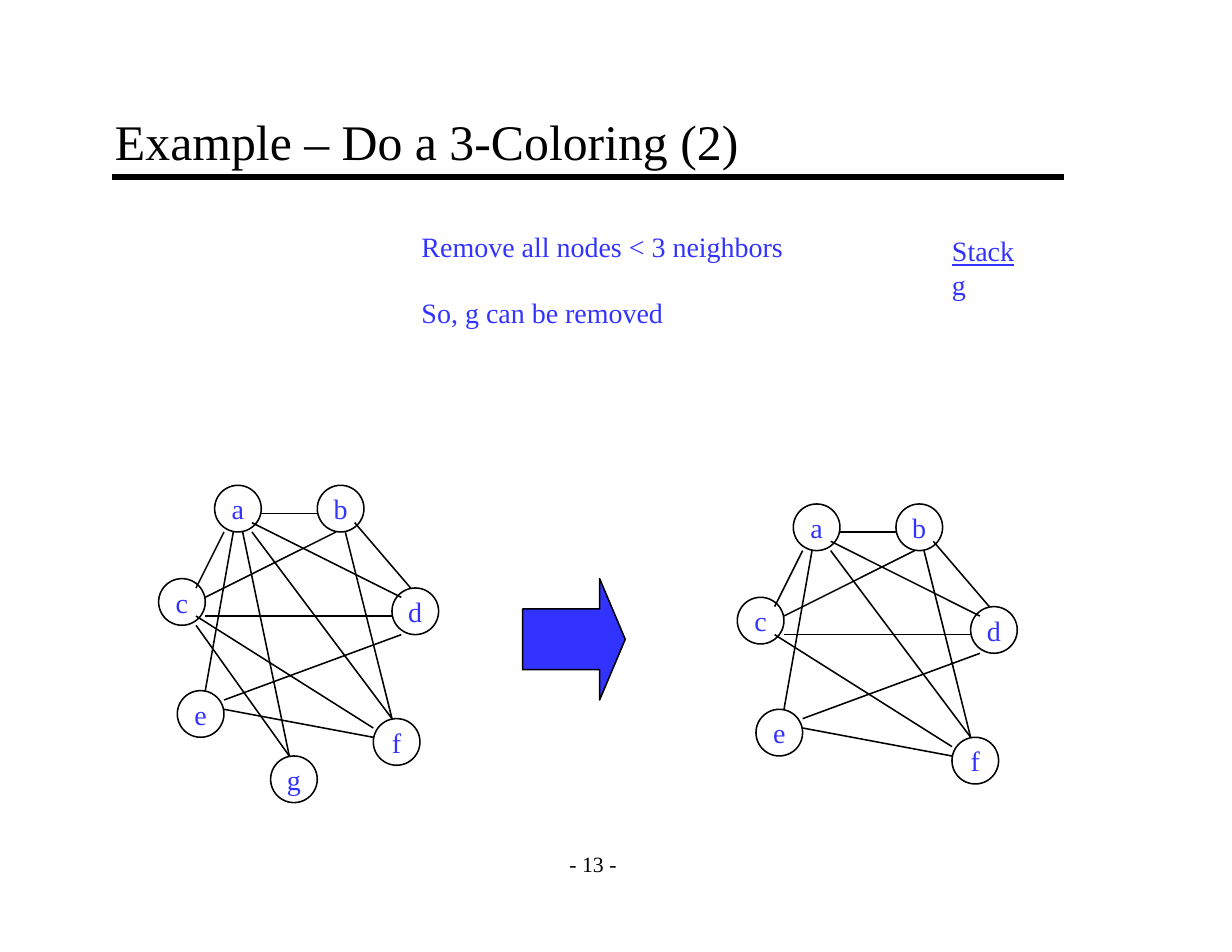
from lxml import etree
from pptx import Presentation
from pptx import util as u
from pptx.dml.color import RGBColor
from pptx.enum import shapes, text
from pptx.oxml.ns import qn

FONT = "Times New Roman"
BLUE, BLACK = "3333FF", "000000"
SIZE = 5  # node diameter in grid steps

# Top left corner of each node, in grid steps
NODES = {"a": (23, 52), "g": (29, 81), "c": (17, 62), "f": (40, 77),
         "d": (42, 63), "b": (34, 52), "e": (19, 74)}

# Joined nodes and the two line ends, in grid steps
EDGES = [("ca", 21, 63, 24, 57), ("cb", 22, 64, 36, 57),
         ("cd", 22, 66, 42, 66), ("cf", 21, 66, 40, 78),
         ("cg", 21, 67, 31, 81), ("ab", 28, 55, 34, 55),
         ("ad", 27, 56, 43, 64), ("af", 27, 57, 42, 77),
         ("ag", 26, 57, 31, 81), ("ae", 25, 57, 22, 74),
         ("bd", 38, 56, 44, 63), ("bf", 37, 57, 42, 77),
         ("de", 43, 68, 24, 75), ("ef", 24, 76, 40, 79)]


def grid(n):
    """Length of n grid steps, twelve to the inch."""
    return u.Cm(n * 2.54 / 12)


def color(code):
    return RGBColor.from_string(code)


def add_run(para, words, size=18, code=BLUE, under=None):
    run = para.add_run()
    run.text = words
    font = run.font
    font.name, font.size, font.underline = FONT, u.Pt(size), under
    font.color.rgb = color(code)


def add_line(slide, x1, y1, x2, y2, width=1):
    line = slide.shapes.add_connector(
        shapes.MSO_CONNECTOR.STRAIGHT, grid(x1), grid(y1), grid(x2), grid(y2))
    line.line.color.rgb = color(BLACK)
    line.line.width = u.Pt(width)
    props = line._element.find(qn("p:spPr"))
    etree.SubElement(props, qn("a:effectLst"))


def add_form(slide, kind, x, y, w, h, fill=None):
    form = slide.shapes.add_shape(kind, grid(x), grid(y), grid(w), grid(h))
    form.shadow.inherit = False
    if fill:
        form.fill.solid()
        form.fill.fore_color.rgb = color(fill)
    else:
        form.fill.background()
    form.line.color.rgb = color(BLACK)
    form.line.width = u.Pt(1)
    return form


def add_node(slide, name, x, y):
    frame = add_form(slide, shapes.MSO_SHAPE.OVAL, x, y, SIZE, SIZE).text_frame
    frame.word_wrap = False
    frame.vertical_anchor = text.MSO_ANCHOR.MIDDLE
    para = frame.paragraphs[0]
    para.alignment = text.PP_ALIGN.CENTER
    add_run(para, name)


def add_graph(slide, dx=0, dy=0, gone=""):
    """Draw the graph moved by dx, dy steps, without the nodes in gone."""
    for name, (x, y) in NODES.items():
        if name not in gone:
            add_node(slide, name, x + dx, y + dy)
    for pair, x1, y1, x2, y2 in EDGES:
        if not set(pair) & set(gone):
            add_line(slide, x1 + dx, y1 + dy, x2 + dx, y2 + dy)


def add_note(slide, x, y, w, h):
    frame = slide.shapes.add_textbox(
        u.Cm(x), u.Cm(y), u.Cm(w), u.Cm(h)).text_frame
    frame.word_wrap = False
    return frame


def set_title(slide, words):
    title = slide.shapes.title
    title.left, title.top = grid(11), grid(11)
    title.width, title.height = grid(102), grid(8)
    frame = title.text_frame
    frame.auto_size = text.MSO_AUTO_SIZE.NONE
    frame.vertical_anchor = text.MSO_ANCHOR.BOTTOM
    frame.margin_left = frame.margin_right = u.Cm(0.28)
    frame.margin_top = frame.margin_bottom = u.Cm(0.15)
    para = frame.paragraphs[0]
    para.alignment = text.PP_ALIGN.LEFT
    add_run(para, words, 32, BLACK)


def add_number(slide):
    frame = add_note(slide, 12.5, 19.05, 1.9, 1.07)
    frame.vertical_anchor = text.MSO_ANCHOR.MIDDLE
    para = frame.paragraphs[0]
    para.alignment = text.PP_ALIGN.CENTER
    add_run(para, "- 13 -", 14, BLACK)


def main():
    deck = Presentation()
    deck.slide_width, deck.slide_height = u.Cm(27.94), u.Cm(21.59)
    slide = deck.slides.add_slide(deck.slide_layouts[5])

    add_line(slide, 12, 19, 114, 19, 4)
    add_number(slide)
    set_title(slide, "Example – Do a 3-Coloring (2)")

    add_graph(slide)
    rule = add_note(slide, 9.31, 5.08, 8.71, 2.54)
    add_run(rule.paragraphs[0], "Remove all nodes < 3 neighbors")
    result = rule.add_paragraph()
    result.space_before = u.Pt(21)
    add_run(result, "So, g can be removed")

    add_graph(slide, 62, 2, gone="g")
    arrow = add_form(slide, shapes.MSO_SHAPE.RIGHT_ARROW, 56, 62, 11, 13, BLUE)
    arrow.adjustments[0], arrow.adjustments[1] = 0.5, 0.25

    stack = add_note(slide, 21.34, 5.18, 1.93, 1.78)
    add_run(stack.paragraphs[0], "Stack", under=True)
    add_run(stack.add_paragraph(), "g")

    deck.save("out.pptx")


if __name__ == "__main__":
    main()
